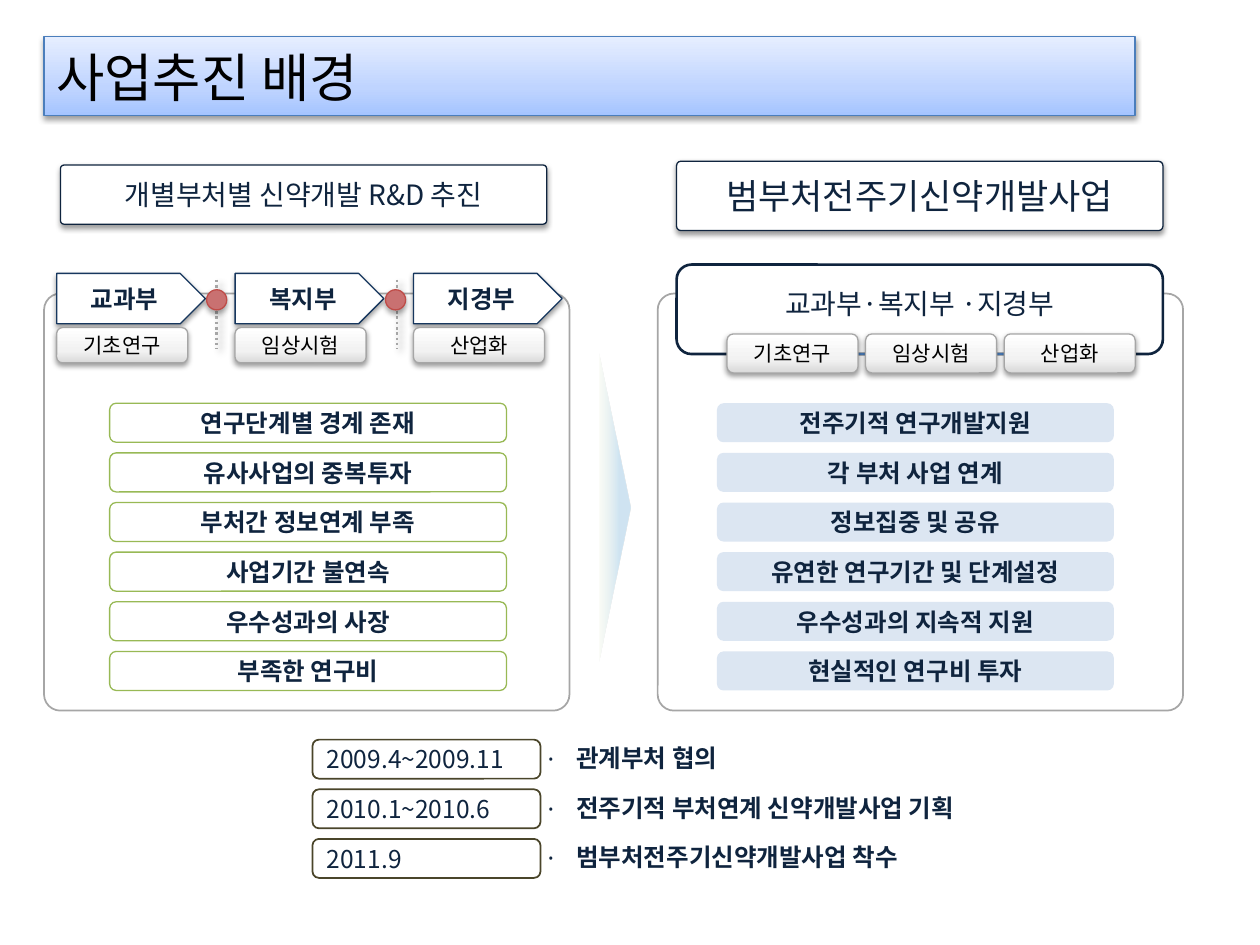
"""Build the project background slide."""
from lxml.etree import SubElement
from pptx import Presentation
from pptx.dml.color import RGBColor
from pptx.enum.dml import MSO_LINE
from pptx.enum.shapes import MSO_CONNECTOR, MSO_SHAPE as SHAPE
from pptx.enum.text import MSO_ANCHOR, PP_ALIGN as ALIGN
from pptx.oxml.ns import qn
from pptx.util import Inches, Pt

FONT = "Noto Sans CJK KR"
NAVY, GREY, WHITE, BLACK = "0F243E", "A6A6A6", "FFFFFF", "000000"
SOFT = (38, 3.1, 1.6, 90)
BUTTON = [(0, "D9D9D9", 100), (35, "F2F2F2", 100), (100, WHITE, 100)]
BANNER = [(0, "A4C4FF", 100), (35, "BFD4FF", 100), (100, "E6EEFF", 100)]
FADE = [(38, "5EA6D3", 29), (100, "D7E4BD", 14)]


def rgb(value):
    return RGBColor.from_string(value)


def add_color(parent, value, alpha):
    color = SubElement(parent, qn("a:srgbClr"), val=value)
    if alpha < 100:
        SubElement(color, qn("a:alpha"), val=str(alpha * 1000))


def set_gradient(sp, stops):
    sp.fill.gradient()
    grad = sp._element.spPr.find(qn("a:gradFill"))
    for child in list(grad):
        grad.remove(child)
    gs_list = SubElement(grad, qn("a:gsLst"))
    for pos, value, alpha in stops:
        add_color(SubElement(gs_list, qn("a:gs"), pos=str(pos * 1000)), value, alpha)
    SubElement(grad, qn("a:lin"), ang=str(270 * 60000), scaled="0")


def set_shadow(sp, shadow):
    spPr = sp._element.spPr
    effects = spPr.find(qn("a:effectLst"))
    if effects is None:
        effects = SubElement(spPr, qn("a:effectLst"))
    if shadow:
        alpha, blur, dist, angle = shadow
        outer = SubElement(effects, qn("a:outerShdw"), blurRad=str(Pt(blur)), dist=str(Pt(dist)),
                           dir=str(angle * 60000), algn="ctr", rotWithShape="0")
        add_color(outer, BLACK, alpha)


def write(sp, text, size=14, color=NAVY, bold=False, align=ALIGN.CENTER, bullet=None, bottom=0.05):
    tf = sp.text_frame
    tf.word_wrap = True
    tf.vertical_anchor = MSO_ANCHOR.MIDDLE
    tf.margin_bottom = Inches(bottom)
    p = tf.paragraphs[0]
    p.alignment = align
    if bullet:
        pPr = p._p.get_or_add_pPr()
        pPr.set("marL", str(Inches(0.25)))
        pPr.set("indent", str(-Inches(0.25)))
        SubElement(pPr, qn("a:buFont"), typeface=FONT)
        SubElement(pPr, qn("a:buChar"), char=bullet)
    r = p.add_run()
    r.text = text
    font = r.font
    font.name, font.size, font.bold = FONT, Pt(size), bold
    font.color.rgb = rgb(color)
    SubElement(r._r.get_or_add_rPr(), qn("a:ea"), typeface=FONT)


class Deck:
    def __init__(self):
        self.prs = Presentation()
        self.prs.slide_width, self.prs.slide_height = Inches(10), Inches(7.5)
        self.s = self.prs.slides.add_slide(self.prs.slide_layouts[6])

    def shape(self, box, kind=SHAPE.ROUNDED_RECTANGLE, fill=None, line=None, width=0.75,
              shadow=None, adj=(), text=None, **fmt):
        sp = self.s.shapes.add_shape(kind, *map(Inches, box))
        for i, value in enumerate(adj):
            sp.adjustments[i] = value
        if isinstance(fill, list):
            set_gradient(sp, fill)
        elif fill:
            sp.fill.solid()
            sp.fill.fore_color.rgb = rgb(fill)
        else:
            sp.fill.background()
        if line:
            sp.line.color.rgb = rgb(line)
            sp.line.width = Pt(width)
        else:
            sp.line.fill.background()
        sp.shadow.inherit = False
        set_shadow(sp, shadow)
        if text:
            write(sp, text, **fmt)
        return sp

    def line(self, x1, y1, x2, y2, color, width, dash=None, shadow=None):
        cn = self.s.shapes.add_connector(MSO_CONNECTOR.STRAIGHT, *map(Inches, (x1, y1, x2, y2)))
        cn.line.color.rgb = rgb(color)
        cn.line.width = Pt(width)
        if dash:
            cn.line.dash_style = dash
        set_shadow(cn, shadow)

    def panel(self, left):
        self.shape((left, 2.33, 4.17, 3.31), line=GREY, width=1, adj=[0.039])

    def heading(self, box, text, size):
        self.shape(box, fill=WHITE, line=NAVY, shadow=SOFT, adj=[0.062], text=text, size=size)

    def button(self, left, top, height, text):
        self.shape((left, top, 1.04, height), fill=BUTTON, line=GREY, shadow=SOFT,
                   text=text, size=12, color=BLACK)

    def bars(self, left, texts, fill, line=None):
        for i, text in enumerate(texts):
            self.shape((left, 3.2 + i * 0.394, 3.15, 0.31), fill=fill, line=line,
                       text=text, bold=True)


def main():
    deck = Deck()
    stages = ["기초연구", "임상시험", "산업화"]
    ministries = ["교과부", "복지부", "지경부"]

    deck.panel(0.35)
    arrow = deck.shape((3.66, 3.91, 2.44, 0.24), SHAPE.DOWN_ARROW, fill=FADE, adj=[0.347, 1])
    arrow.rotation = 270
    deck.heading((0.48, 1.31, 3.86, 0.47), "개별부처별 신약개발 R&D 추진", 16)
    for x in (1.72, 3.15):
        deck.line(x, 2.22, x, 2.77, GREY, 1.5, MSO_LINE.ROUND_DOT, (40, 4, 3, 45))
    for i, (ministry, stage) in enumerate(zip(ministries, stages)):
        left = 0.45 + i * 1.416
        deck.shape((left, 2.17, 1.18, 0.4), SHAPE.PENTAGON, fill=WHITE, line="17375E",
                   shadow=SOFT, text=ministry, bold=True)
        deck.button(left, 2.6, 0.28, stage)
    for x in (1.72, 3.14):
        deck.shape((x - 0.08, 2.3, 0.16, 0.16), SHAPE.OVAL, fill="C97171", line="BF4C48",
                   shadow=(35, 3.1, 1.8, 90))
    deck.bars(0.87, ["연구단계별 경계 존재", "유사사업의 중복투자", "부처간 정보연계 부족",
                     "사업기간 불연속", "우수성과의 사장", "부족한 연구비"], WHITE, "98B955")

    deck.panel(5.22)
    deck.heading((5.37, 1.28, 3.86, 0.55), "범부처전주기신약개발사업", 20)
    deck.shape((5.37, 2.1, 3.86, 0.71), fill=WHITE, line=NAVY, width=1.5,
               text="교과부·복지부 ·지경부", size=16, bottom=0.15)
    deck.line(6.81, 2.81, 7.97, 2.81, "4B7EBC", 0.75)
    for i, stage in enumerate(stages):
        deck.button(5.77 + i * 1.1, 2.65, 0.31, stage)
    deck.bars(5.69, ["전주기적 연구개발지원", "각 부처 사업 연계", "정보집중 및 공유",
                     "유연한 연구기간 및 단계설정", "우수성과의 지속적 지원",
                     "현실적인 연구비 투자"], "DCE6F2")

    history = [("2009.4~2009.11", "관계부처 협의"),
               ("2010.1~2010.6", "전주기적 부처연계 신약개발사업 기획"),
               ("2011.9", "범부처전주기신약개발사업 착수")]
    for i, (period, event) in enumerate(history):
        top = 5.87 + i * 0.394
        deck.shape((4.21, top - 0.01, 3.86, 0.31), text=event, bold=True,
                   align=ALIGN.LEFT, bullet="·")
        deck.shape((2.48, top, 1.81, 0.31), fill=WHITE, line="4A452A", width=1,
                   text=period, align=ALIGN.LEFT)

    deck.shape((0.35, 0.29, 8.66, 0.63), SHAPE.RECTANGLE, fill=BANNER, line="4B7EBC",
               shadow=SOFT, text="사업추진 배경", size=30, color=BLACK, align=ALIGN.LEFT)
    deck.prs.save("out.pptx")


if __name__ == "__main__":
    main()
